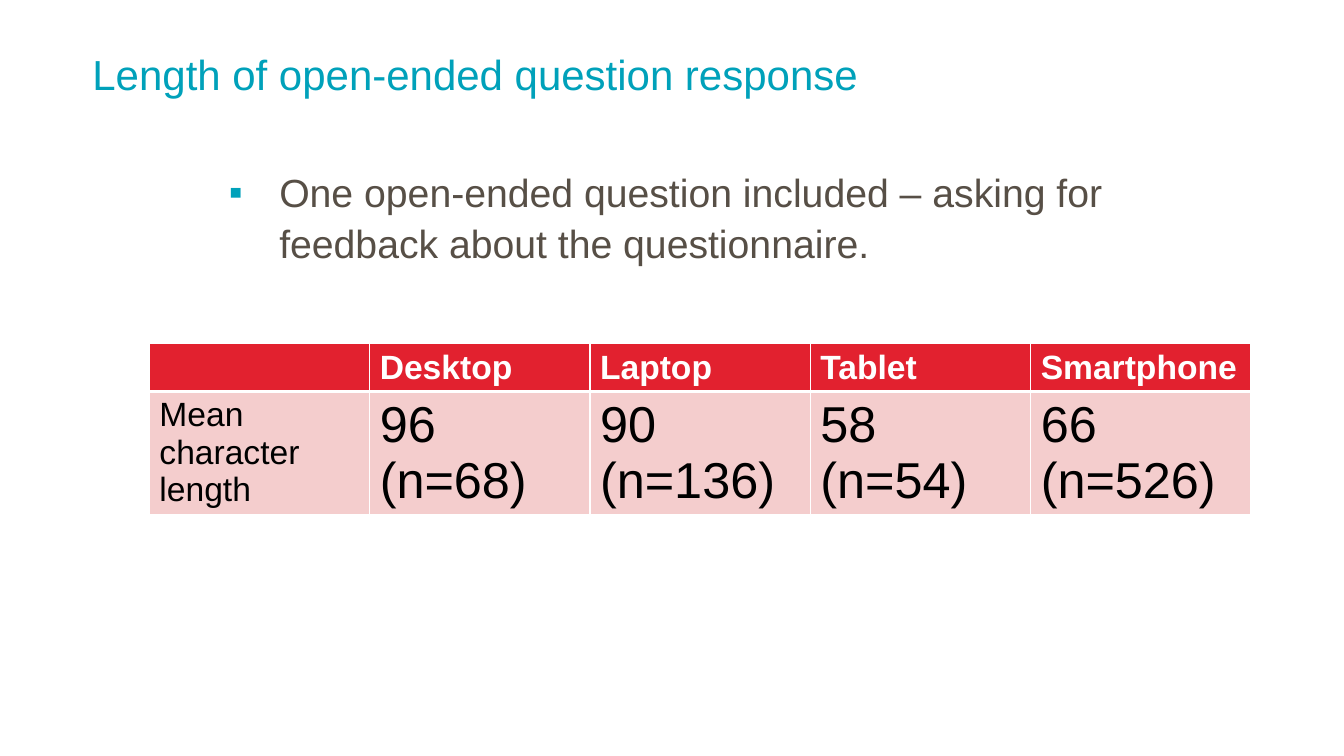
from lxml.etree import SubElement
from pptx import Presentation
from pptx.dml.color import RGBColor
from pptx.enum.text import MSO_ANCHOR, MSO_AUTO_SIZE, PP_ALIGN
from pptx.oxml.ns import qn
from pptx.util import Pt

COLORS = {"teal": "00A1BA", "brown": "574F46", "red": "E2212F",
          "pink": "F4CDCD", "white": "FFFFFF", "black": "000000"}
HEADS = ["", "Desktop", "Laptop", "Tablet", "Smartphone"]
MEANS = ["Mean character length", "96\n(n=68)", "90\n(n=136)",
         "58\n(n=54)", "66\n(n=526)"]


def style(para, size, color, bold=False):
    for font in [para.font] + [run.font for run in para.runs]:
        font.name = "Arial"
        font.size = Pt(size)
        font.bold = bold
        font.color.rgb = RGBColor.from_string(COLORS[color])


def fill_holder(shape, box, text, size, color, pitch):
    """Place a placeholder and set its one paragraph."""
    shape.left, shape.top, shape.width, shape.height = map(Pt, box)
    frame = shape.text_frame
    frame.text = text
    frame.word_wrap = True
    frame.auto_size = MSO_AUTO_SIZE.NONE
    frame.vertical_anchor = MSO_ANCHOR.TOP
    frame.margin_left = frame.margin_right = 0
    frame.margin_top = frame.margin_bottom = 0
    para = frame.paragraphs[0]
    para.alignment = PP_ALIGN.LEFT
    para.line_spacing = pitch
    para.space_before = Pt(0)
    style(para, size, color)
    return para


def add_title(slide, box):
    fill_holder(slide.shapes.title, box,
                "Length of open-ended question response", 30, "teal", 0.9)


def add_body(slide, box):
    para = fill_holder(
        slide.placeholders[1], box,
        "One open-ended question included – asking for feedback "
        "about the questionnaire.", 28, "brown", 1.07)
    # Square bullet with a hanging indent
    props = para._p.get_or_add_pPr()
    props.set("marL", str(Pt(36)))
    props.set("indent", str(Pt(-36)))
    tint = SubElement(props, qn("a:buClr"))
    SubElement(tint, qn("a:srgbClr"), val=COLORS["teal"])
    SubElement(props, qn("a:buFont"), typeface="Arial")
    SubElement(props, qn("a:buChar"), char="▪")
    # Default run settings come last in the paragraph properties
    props.append(props.find(qn("a:defRPr")))


def add_edges(cell, top, bottom):
    props = cell._tc.get_or_add_tcPr()
    for side, width in zip("LRTB", (1, 1, top, bottom)):
        line = SubElement(props, qn("a:ln" + side), w=str(Pt(width)))
        paint = SubElement(line, qn("a:solidFill"))
        SubElement(paint, qn("a:srgbClr"), val=COLORS["white"])


def set_cell(cell, text, size, ink, back, bold, edges):
    add_edges(cell, *edges)
    cell.fill.solid()
    cell.fill.fore_color.rgb = RGBColor.from_string(COLORS[back])
    cell.text = text
    for para in cell.text_frame.paragraphs:
        style(para, size, ink, bold)


def add_grid(slide, box):
    table = slide.shapes.add_table(2, len(HEADS), *map(Pt, box)).table
    table.rows[0].height = Pt(33.6)
    table.rows[1].height = Pt(box[3] - 33.6)
    for col, (head, mean) in enumerate(zip(HEADS, MEANS)):
        table.columns[col].width = Pt(box[2] / len(HEADS))
        set_cell(table.cell(0, col), head, 24, "white", "red", True, (1, 3))
        set_cell(table.cell(1, col), mean, 36 if col else 24,
                 "black", "pink", False, (3, 1))


def main():
    deck = Presentation()
    deck.slide_width, deck.slide_height = Pt(960), Pt(540)
    slide = deck.slides.add_slide(deck.slide_layouts[1])
    add_title(slide, (66, 39, 828, 62.5))
    add_body(slide, (163.5, 118, 730, 312.5))
    add_grid(slide, (106.7, 245.6, 787, 121))
    deck.save("out.pptx")


if __name__ == "__main__":
    main()
